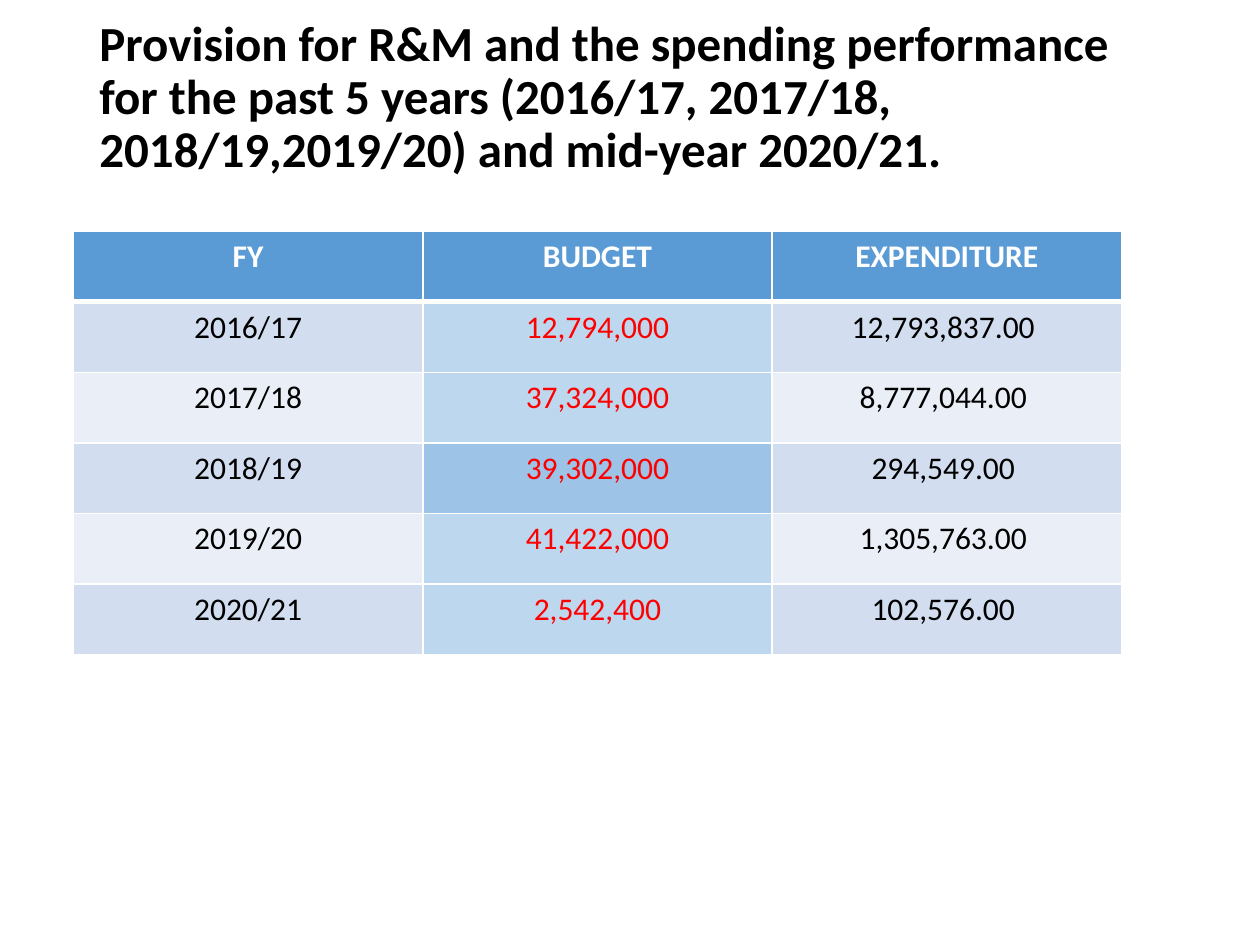
from lxml import etree
from pptx import Presentation
from pptx import util as u
from pptx.dml.color import RGBColor
from pptx.enum import text
from pptx.oxml import ns

BLACK = RGBColor(0x00, 0x00, 0x00)
WHITE = RGBColor(0xFF, 0xFF, 0xFF)
RED = RGBColor(0xFF, 0x00, 0x00)
HEADER_BLUE = RGBColor(0x5B, 0x9B, 0xD5)
BANDS = (RGBColor(0xD2, 0xDE, 0xEF), RGBColor(0xEA, 0xEF, 0xF7))
BUDGET_BLUE = RGBColor(0xBD, 0xD7, 0xEE)
HIGHLIGHT_BLUE = RGBColor(0x9D, 0xC3, 0xE6)

TITLE = ("Provision for R&M and the spending performance for the past 5 years "
         "(2016/17, 2017/18, 2018/19,2019/20) and mid-year 2020/21.")
HEADERS = ("FY", "BUDGET", "EXPENDITURE")
# The space after each expenditure belongs to its number format.
RECORDS = (
    ("2016/17", "12,794,000", "12,793,837.00 "),
    ("2017/18", "37,324,000", "8,777,044.00 "),
    ("2018/19", "39,302,000", "294,549.00 "),
    ("2019/20", "41,422,000", "1,305,763.00 "),
    ("2020/21", "2,542,400", "102,576.00 "),
)
BUDGET_COLUMN = 1
HIGHLIGHT_YEAR = "2018/19"


def write_text(frame, content, size=18, color=BLACK, bold=False,
               align=text.PP_ALIGN.CENTER, line_spacing=None):
    paragraph = frame.paragraphs[0]
    paragraph.alignment = align
    paragraph.line_spacing = line_spacing
    run = paragraph.add_run()
    run.text = content
    run.font.name = "Calibri"
    run.font.size = u.Pt(size)
    run.font.bold = bold
    run.font.color.rgb = color


def set_borders(cell, **widths):
    """Draw white borders; call before filling, as lines precede the fill."""
    properties = cell._tc.get_or_add_tcPr()
    for side in "LRTB":
        line = etree.SubElement(properties, ns.qn(f"a:ln{side}"),
                                w=str(u.Pt(widths.get(side, 1))))
        fill = etree.SubElement(line, ns.qn("a:solidFill"))
        etree.SubElement(fill, ns.qn("a:srgbClr"), val=str(WHITE))


class SlideBuilder:
    def __init__(self, presentation):
        self.slide = presentation.slides.add_slide(presentation.slide_layouts[5])

    def title(self, content, left, top, width, height):
        shape = self.slide.shapes.title
        shape.left, shape.top = left, top
        shape.width, shape.height = width, height
        frame = shape.text_frame
        frame.word_wrap = True
        frame.auto_size = text.MSO_AUTO_SIZE.NONE
        frame.vertical_anchor = text.MSO_ANCHOR.MIDDLE
        write_text(frame, content, size=28, bold=True,
                   align=text.PP_ALIGN.LEFT, line_spacing=0.9)

    def cell(self, cell, content, fill, color=BLACK, bold=False, **borders):
        set_borders(cell, **borders)
        cell.fill.solid()
        cell.fill.fore_color.rgb = fill
        write_text(cell.text_frame, content, color=color, bold=bold)

    def budget_table(self, left, top, width, height):
        table = self.slide.shapes.add_table(
            len(RECORDS) + 1, len(HEADERS), left, top, width, height).table
        for column, header in enumerate(HEADERS):
            self.cell(table.cell(0, column), header, HEADER_BLUE,
                      color=WHITE, bold=True, B=3)
        for row, record in enumerate(RECORDS, start=1):
            for column, value in enumerate(record):
                fill, color = BANDS[(row - 1) % 2], BLACK
                if column == BUDGET_COLUMN:
                    color = RED
                    fill = (HIGHLIGHT_BLUE if record[0] == HIGHLIGHT_YEAR
                            else BUDGET_BLUE)
                self.cell(table.cell(row, column), value, fill, color=color,
                          T=3 if row == 1 else 1)


def main():
    presentation = Presentation()
    presentation.slide_width = u.Cm(25.4)
    presentation.slide_height = u.Cm(19.05)
    builder = SlideBuilder(presentation)
    builder.title(TITLE, u.Cm(1.75), u.Cm(0), u.Cm(21.9), u.Cm(3.96))
    builder.budget_table(u.Cm(1.48), u.Cm(4.66), u.Cm(21.13), u.Cm(8.54))
    presentation.save("out.pptx")


if __name__ == "__main__":
    main()
